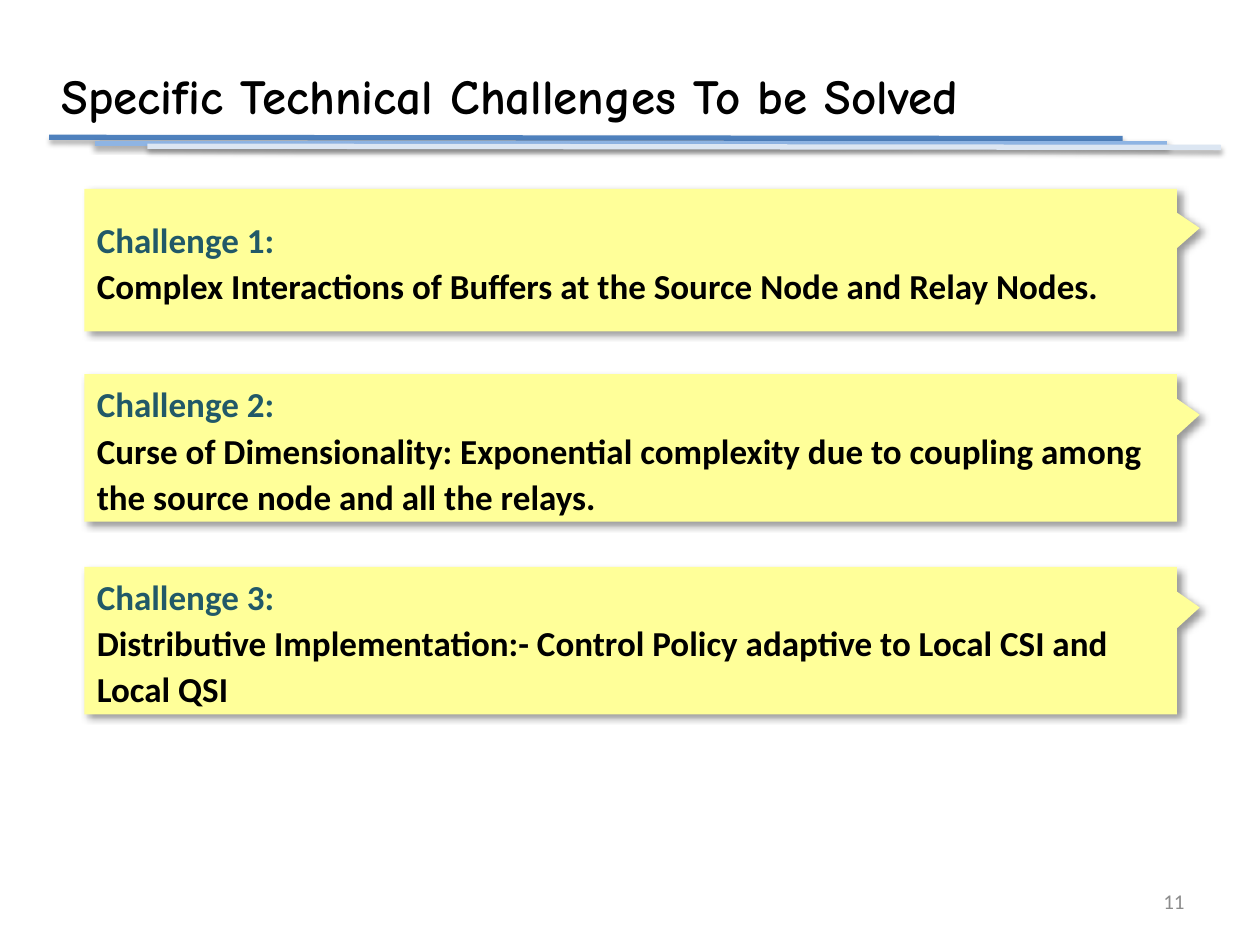
from lxml import etree
from pptx import Presentation
from pptx.dml.color import RGBColor
from pptx.enum import shapes, text
from pptx.oxml import ns
from pptx.util import Inches, Pt

RULES = [
    (0.39, 1.09, 8.91, 1.10, "4F81BD"),
    (0.75, 1.14, 9.26, 1.14, "8EB4E3"),
    (1.17, 1.16, 9.69, 1.17, "DCE6F2"),
]
CHALLENGES = [
    (1.50, 1.13, "Complex Interactions of Buffers at the Source Node and Relay Nodes."),
    (2.97, 1.17, "Curse of Dimensionality: Exponential complexity due to coupling "
                 "among the source node and all the relays."),
    (4.50, 1.17, "Distributive Implementation:- Control Policy adaptive to "
                 "Local CSI and Local QSI"),
]


def rgb(value):
    return RGBColor.from_string(value)


def add_shadow(sp, alpha, blur, dist, angle):
    """Append an outer shadow; call it after the line has been set."""
    effects = etree.SubElement(sp._element.spPr, ns.qn("a:effectLst"))
    shadow = etree.SubElement(
        effects, ns.qn("a:outerShdw"), blurRad=str(Pt(blur)), dist=str(Pt(dist)),
        dir=str(angle * 60000), rotWithShape="0")
    color = etree.SubElement(shadow, ns.qn("a:srgbClr"), val="000000")
    etree.SubElement(color, ns.qn("a:alpha"), val=str(alpha * 1000))


def add_run(p, content, color, **font):
    r = p.add_run()
    r.text = content
    r.font.color.rgb = rgb(color)
    for name, value in font.items():
        setattr(r.font, name, value)


def add_rule(s, x1, y1, x2, y2, color):
    line = s.shapes.add_connector(
        shapes.MSO_CONNECTOR.STRAIGHT, *map(Inches, (x1, y1, x2, y2)))
    line.line.color.rgb = rgb(color)
    line.line.width = Pt(3)
    add_shadow(line, 35, 3.1, 1.8, 90)


def add_text(s, box, content, color, frame, align, **font):
    tf = s.shapes.add_textbox(*map(Inches, box)).text_frame
    for name, value in frame.items():
        setattr(tf, name, value)
    p = tf.paragraphs[0]
    p.alignment = align
    add_run(p, content, color, **font)


def add_challenge(s, number, top, height, content):
    sp = s.shapes.add_shape(
        shapes.MSO_SHAPE.RECTANGULAR_CALLOUT,
        *map(Inches, (0.67, top, 8.67, height)))
    sp.adjustments[0], sp.adjustments[1] = 0.521, -0.225
    sp.fill.solid()
    sp.fill.fore_color.rgb = rgb("FFFF99")
    sp.line.fill.background()
    add_shadow(sp, 40, 4, 3, 45)
    tf = sp.text_frame
    tf.word_wrap = True
    tf.vertical_anchor = text.MSO_ANCHOR.MIDDLE
    heading = (f"Challenge {number}:", "215968")
    for i, (line, color) in enumerate([heading, (content, "000000")]):
        p = tf.add_paragraph() if i else tf.paragraphs[0]
        p.alignment = text.PP_ALIGN.LEFT
        p.line_spacing = 1.1
        add_run(p, line, color, name="Calibri", size=Pt(20), bold=True)


def main():
    prs = Presentation()
    prs.slide_width, prs.slide_height = Inches(10), Inches(7.5)
    s = prs.slides.add_slide(prs.slide_layouts[6])
    for rule in RULES:
        add_rule(s, *rule)
    add_text(s, (0.39, 0.47, 8.45, 0.57),
             "Specific Technical Challenges To be Solved", "000000",
             {"word_wrap": False, "auto_size": text.MSO_AUTO_SIZE.SHAPE_TO_FIT_TEXT},
             text.PP_ALIGN.LEFT, name="Comic Neue", size=Pt(28), bold=True)
    add_text(s, (7.17, 6.95, 2.33, 0.4), "11", "8C8C8C",
             {"word_wrap": True, "vertical_anchor": text.MSO_ANCHOR.MIDDLE},
             text.PP_ALIGN.RIGHT, name="Calibri", size=Pt(12))
    for number, challenge in enumerate(CHALLENGES, 1):
        add_challenge(s, number, *challenge)
    prs.save("out.pptx")


if __name__ == "__main__":
    main()
